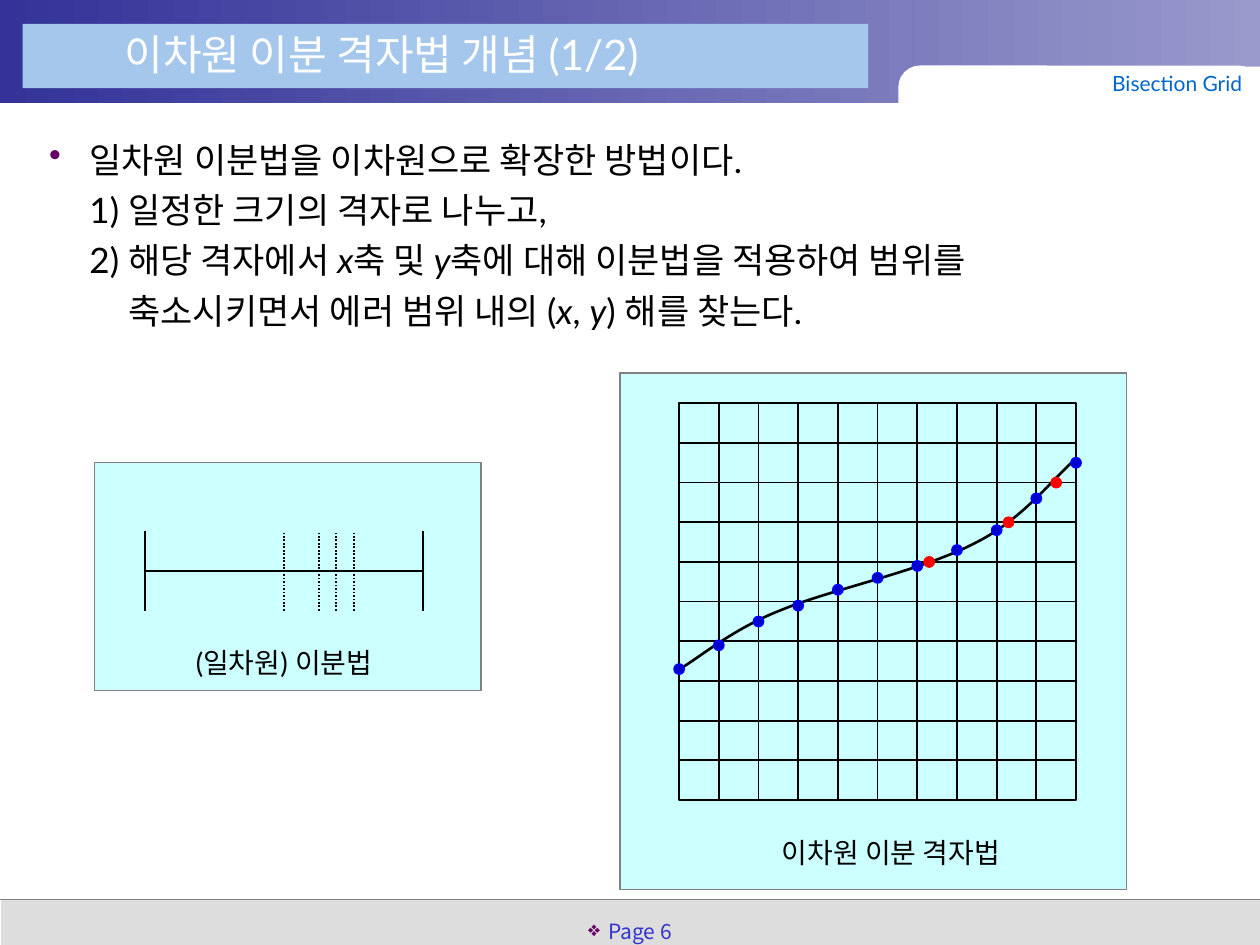
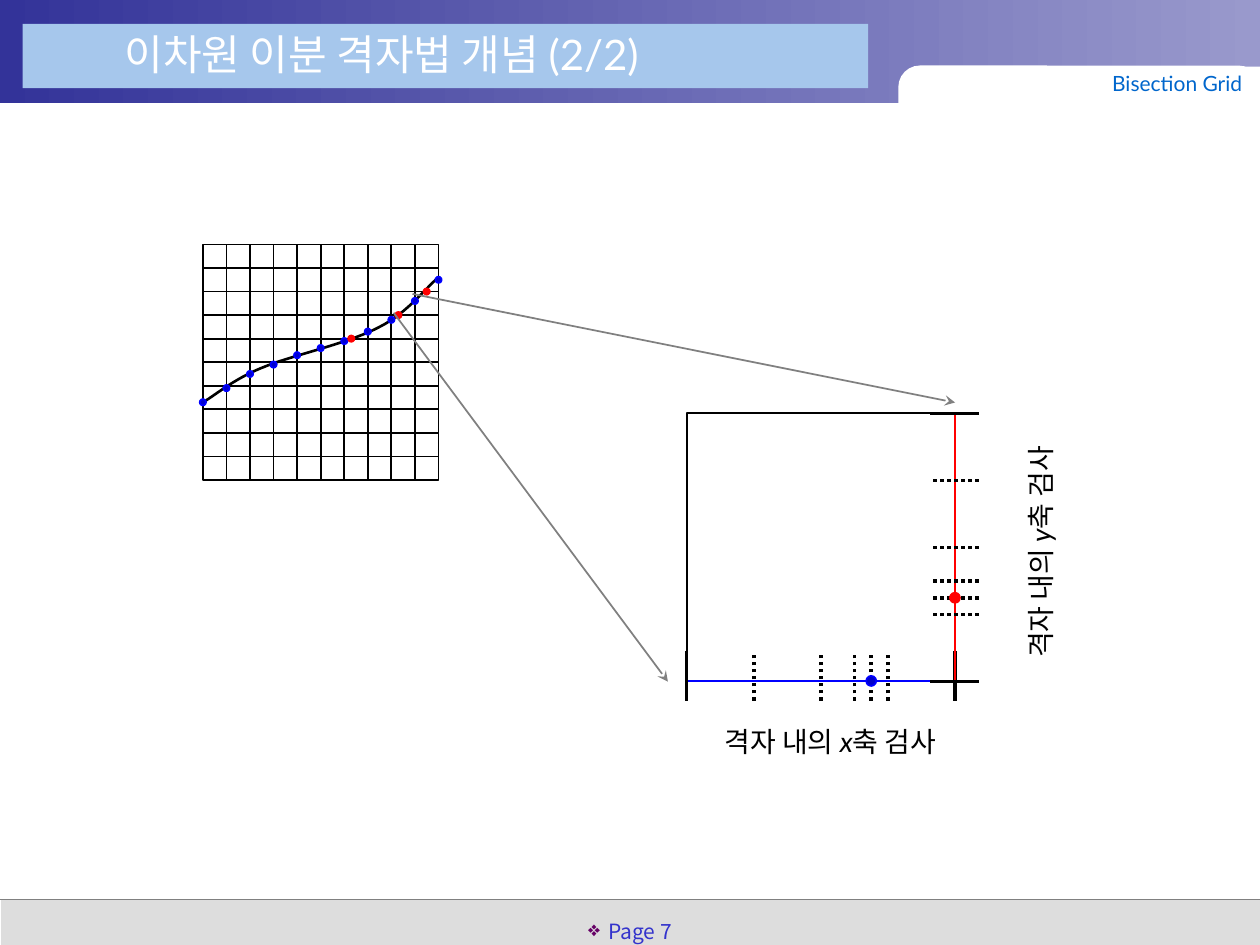
from dataclasses import dataclass

from lxml.etree import SubElement
from pptx import Presentation
from pptx.dml.color import RGBColor
from pptx.enum.dml import MSO_LINE
from pptx.enum.shapes import MSO_CONNECTOR, MSO_SHAPE as Preset
from pptx.enum.text import MSO_ANCHOR as Anchor, PP_ALIGN as Align
from pptx.oxml.ns import qn
from pptx.util import Inches, Pt

COLUMNS, ROWS = 100, 75  # grid of the slide
UNIT = Inches(0.1)


@dataclass(frozen=True)
class Style:
    size: int
    color: str
    font: str = "Lato"


class Theme:
    black, white, gray = "000000", "FFFFFF", "808080"
    red, blue, dot_blue = "FF0000", "0000FF", "0000CC"
    band_start, band_end = "333399", "9999CC"
    title_bar, footer, panel, bullet = "A6C7EC", "DDDDDD", "CCFFFF", "660066"
    title = Style(24, white)
    body = Style(20, black)
    caption = Style(16, black)
    section = Style(12, "0066CC")
    page_number = Style(12, "3333CC", "Noto Sans CJK KR")
    thin, curve, heavy = 1, 1.5, 2


@dataclass(frozen=True)
class Box:
    """A rectangle in grid columns and rows."""
    left: float
    top: float
    width: float
    height: float

    def point(self, across, down):
        return self.left + across * self.width, self.top + down * self.height

    def inner(self, across, down, width, height):
        return Box(*self.point(across, down), width * self.width, height * self.height)

    def lengths(self):
        return [units(value) for value in (self.left, self.top, self.width, self.height)]


CELLS = 10
CURVE = [(0, .67), (.04, .65), (.13, .57), (.26, .52), (.38, .47),
         (.62, .42), (.75, .35), (.87, .29), (.95, .18), (1, .14)]
COLUMN_CROSSINGS = [.67, .61, .55, .51, .47, .44, .41, .37, .32, .24, .15]
ROW_CROSSINGS = [(.63, .4), (.83, .3), (.95, .2)]
ROOT = 11 / 16
PROBES = [1 / 2, 5 / 8, ROOT, 3 / 4]


def units(value):
    return round(value * UNIT)


def rgb(color):
    return RGBColor.from_string(color)


def paint_line(line, color, weight):
    line.color.rgb = rgb(color)
    line.width = Pt(weight)


def add_block(page, box, fill=None, outline=None, preset=Preset.RECTANGLE):
    shape = page.shapes.add_shape(preset, *box.lengths())
    shape.shadow.inherit = False
    if fill:
        shape.fill.solid()
        shape.fill.fore_color.rgb = rgb(fill)
    else:
        shape.fill.background()
    if outline:
        paint_line(shape.line, outline, Theme.thin)
    else:
        shape.line.fill.background()
    return shape


def add_line(page, start, end, color=Theme.black, weight=Theme.thin, dotted=False, arrow=False):
    line = page.shapes.add_connector(
        MSO_CONNECTOR.STRAIGHT, *[units(value) for value in (*start, *end)])
    paint_line(line.line, color, weight)
    if dotted:
        line.line.dash_style = MSO_LINE.ROUND_DOT
    properties = line._element.spPr
    if arrow:
        SubElement(properties.find(qn("a:ln")), qn("a:tailEnd"), type="stealth")
    SubElement(properties, qn("a:effectLst"))


def add_dot(page, center, size, fill, outline):
    x, y = center
    add_block(page, Box(x - size / 2, y - size / 2, size, size), fill, outline, Preset.OVAL)


def add_frame(page, box, anchor=Anchor.TOP, margin=None, wrap=True):
    shape = page.shapes.add_textbox(*box.lengths())
    frame = shape.text_frame
    frame.word_wrap = wrap
    frame.vertical_anchor = anchor
    if margin is not None:
        frame.margin_left = frame.margin_right = Inches(margin)
        frame.margin_top = frame.margin_bottom = Inches(margin)
    return shape


def write(para, text, style, align=Align.LEFT, spacing=None, hanging=None, bullet=None):
    """Fill a paragraph; *stars* mark italics, hanging is (margin, indent) in inches."""
    properties = para._p.get_or_add_pPr()
    if hanging:
        margin, indent = hanging
        properties.set("marL", str(Inches(margin)))
        properties.set("indent", str(Inches(indent)))
    if bullet:
        color = SubElement(properties, qn("a:buClr"))
        SubElement(color, qn("a:srgbClr"), val=Theme.bullet)
        SubElement(properties, qn("a:buChar"), char=bullet)
    para.alignment = align
    if spacing:
        para.line_spacing = spacing
    para.font.size = Pt(style.size)
    para.font.name = style.font
    para.font.color.rgb = rgb(style.color)
    for index, piece in enumerate(text.split("*")):
        for number, line in enumerate(piece.split("\n")):
            if number:
                para.add_line_break()
            span = para.add_run()
            span.text = line
            if index % 2:
                span.font.italic = True


def add_caption(page, box, text, rotation=0):
    shape = add_frame(page, box, Anchor.MIDDLE, 0)
    shape.rotation = rotation
    write(shape.text_frame.paragraphs[0], text, Theme.caption, Align.CENTER, 1.4)


def add_header(page, box, title):
    band = add_block(page, box, Theme.band_start)
    band.fill.gradient()
    band.fill.gradient_angle = 0
    for stop, color in zip(band.fill.gradient_stops, (Theme.band_start, Theme.band_end)):
        stop.color.rgb = rgb(color)
    tab = add_block(page, Box(71.3, 5.2, 28.7, 5.9), Theme.white,
                    preset=Preset.ROUNDED_RECTANGLE)
    tab.adjustments[0] = 0.29
    add_block(page, Box(91, 5.3, 9, 2.4), Theme.white)
    add_block(page, Box(1.8, 1.9, 67.1, 5.1), Theme.title_bar)
    heading = add_frame(page, Box(8.9, 1.8, 60, 5))
    write(heading.text_frame.paragraphs[0], title, Theme.title)
    section = add_frame(page, Box(87.8, 5.2, 11.2, 2.8), Anchor.MIDDLE, 0.04, wrap=False)
    write(section.text_frame.paragraphs[0], "Bisection Grid", Theme.section, Align.RIGHT)


def add_footer(page, box, number):
    add_block(page, box.inner(0.001, 0, 0.999, 1), Theme.footer)
    add_line(page, box.point(0, 0), box.point(1, 0), Theme.gray)
    frame = add_frame(page, Box(45.5, box.top + 0.6, 9, 2.8)).text_frame
    frame.margin_top = Inches(0.11)
    write(frame.paragraphs[0], f"Page {number}", Theme.page_number, Align.CENTER,
          0.9, (0.16, -0.16), "❖")


def new_page(deck, title, number):
    page = deck.slides.add_slide(deck.slide_layouts[6])
    add_header(page, Box(0, 0, COLUMNS, 8.2), title)
    add_footer(page, Box(0, 71.4, COLUMNS, ROWS - 71.4), number)
    return page


def add_curve(page, points):
    """Draw one smooth outline; after the first point, every three make a Bézier piece."""
    corners = [(units(x), units(y)) for x, y in points]
    builder = page.shapes.build_freeform(*corners[0])
    builder.add_line_segments(corners[1:], close=False)
    shape = builder.convert_to_shape()
    outline = shape._element.find(".//" + qn("a:path"))
    segments = outline.findall(qn("a:lnTo"))
    for first in range(0, len(segments), 3):
        bezier = SubElement(outline, qn("a:cubicBezTo"))
        for segment in segments[first:first + 3]:
            bezier.append(segment[0])
            outline.remove(segment)
    shape.shadow.inherit = False
    shape.fill.background()
    paint_line(shape.line, Theme.black, Theme.curve)


def add_grid_plot(page, box, dot):
    """Square grid with the curve and its crossings of columns (blue) and rows (red)."""
    add_curve(page, [box.point(*point) for point in CURVE])
    add_block(page, box, outline=Theme.black)
    for index in range(1, CELLS):
        share = index / CELLS
        add_line(page, box.point(share, 1), box.point(share, 0))
        add_line(page, box.point(1, share), box.point(0, share))
    for index, down in enumerate(COLUMN_CROSSINGS):
        add_dot(page, box.point(index / CELLS, down), dot, Theme.dot_blue, Theme.blue)
    for crossing in ROW_CROSSINGS:
        add_dot(page, box.point(*crossing), dot, Theme.red, Theme.red)


def add_bisection(page, box, probes, axis_share=0.5, upright=False,
                  color=Theme.black, axis_weight=Theme.thin, weight=Theme.thin):
    """Axis along the box with solid end marks and dotted probes; returns a place finder."""
    def place(along, across):
        return box.point(across, along) if upright else box.point(along, across)

    add_line(page, place(0, axis_share), place(1, axis_share), color, axis_weight)
    for along in (0, 1, *probes):
        add_line(page, place(along, 1), place(along, 0), weight=weight, dotted=along in probes)
    return place


def add_body(page, box):
    frame = add_frame(page, box, margin=0.04).text_frame
    write(frame.paragraphs[0], "일차원 이분법을 이차원으로 확장한 방법이다.", Theme.body,
          spacing=1.2, hanging=(0.32, -0.32), bullet="•")
    for step in ("1) 일정한 크기의 격자로 나누고,",
                 "2) 해당 격자에서 *x*축 및 *y*축에 대해 이분법을 적용하여 범위를\n"
                 "축소시키면서 에러 범위 내의 (*x*, *y*) 해를 찾는다."):
        write(frame.add_paragraph(), step, Theme.body, spacing=1.2, hanging=(0.63, -0.31))


def add_line_panel(page, box):
    add_block(page, box, Theme.panel, Theme.gray)
    add_bisection(page, box.inner(0.13, 0.3, 0.72, 0.35), PROBES)
    add_caption(page, box.inner(0.08, 0.74, 0.82, 0.21), "(일차원) 이분법")


def add_grid_panel(page, box):
    add_block(page, box, Theme.panel, Theme.gray)
    add_grid_plot(page, Box(box.left + 4.7, box.top + 2.4, 31.5, 31.5), 0.8)
    add_caption(page, box.inner(0.22, 0.87, 0.63, 0.09), "이차원 이분 격자법")


def add_cell_search(page, box):
    """One enlarged grid cell, bisected along its lower and right edges."""
    add_block(page, box, outline=Theme.black)
    probes = [1 / 4, *PROBES]
    edges = [
        (Box(box.left, box.top + 18.9, box.width, 3.9), 0.6, False, Theme.blue, Theme.dot_blue),
        (Box(box.left + 19.3, box.top, 3.9, box.height), 0.51, True, Theme.red, Theme.red),
    ]
    for edge, axis_share, upright, color, fill in edges:
        place = add_bisection(page, edge, probes, axis_share, upright, color,
                              Theme.curve, Theme.heavy)
        add_dot(page, place(ROOT, axis_share), 0.8, fill, color)
    add_caption(page, Box(box.left - 0.4, box.top + 23.6, 23.6, 3.8), "격자 내의 *x*축 검사")
    add_caption(page, Box(box.left + 15.7, box.top + 9.1, 23.6, 3.8), "격자 내의 *y*축 검사", 270)


def build_concept_page(deck):
    page = new_page(deck, "이차원 이분 격자법 개념 (1/2)", 6)
    add_body(page, Box(3.5, 9.9, 93.7, 16.8))
    add_line_panel(page, Box(7.5, 36.7, 30.7, 18.1))
    add_grid_panel(page, Box(49.2, 29.6, 40.2, 41))


def build_search_page(deck):
    page = new_page(deck, "이차원 이분 격자법 개념 (2/2)", 7)
    plot, cell = Box(16.1, 19.4, 18.7, 18.7), Box(54.5, 32.8, 21.3, 21.3)
    add_grid_plot(page, plot, 0.5)
    add_cell_search(page, cell)
    for start, end in ((plot.point(0.81, 0.29), cell.point(-0.07, 1)),
                       (plot.point(0.89, 0.21), cell.point(1, -0.04))):
        add_line(page, start, end, Theme.gray, arrow=True)


def main():
    deck = Presentation()
    deck.slide_width, deck.slide_height = units(COLUMNS), units(ROWS)
    build_concept_page(deck)
    build_search_page(deck)
    deck.save("out.pptx")


if __name__ == "__main__":
    main()
